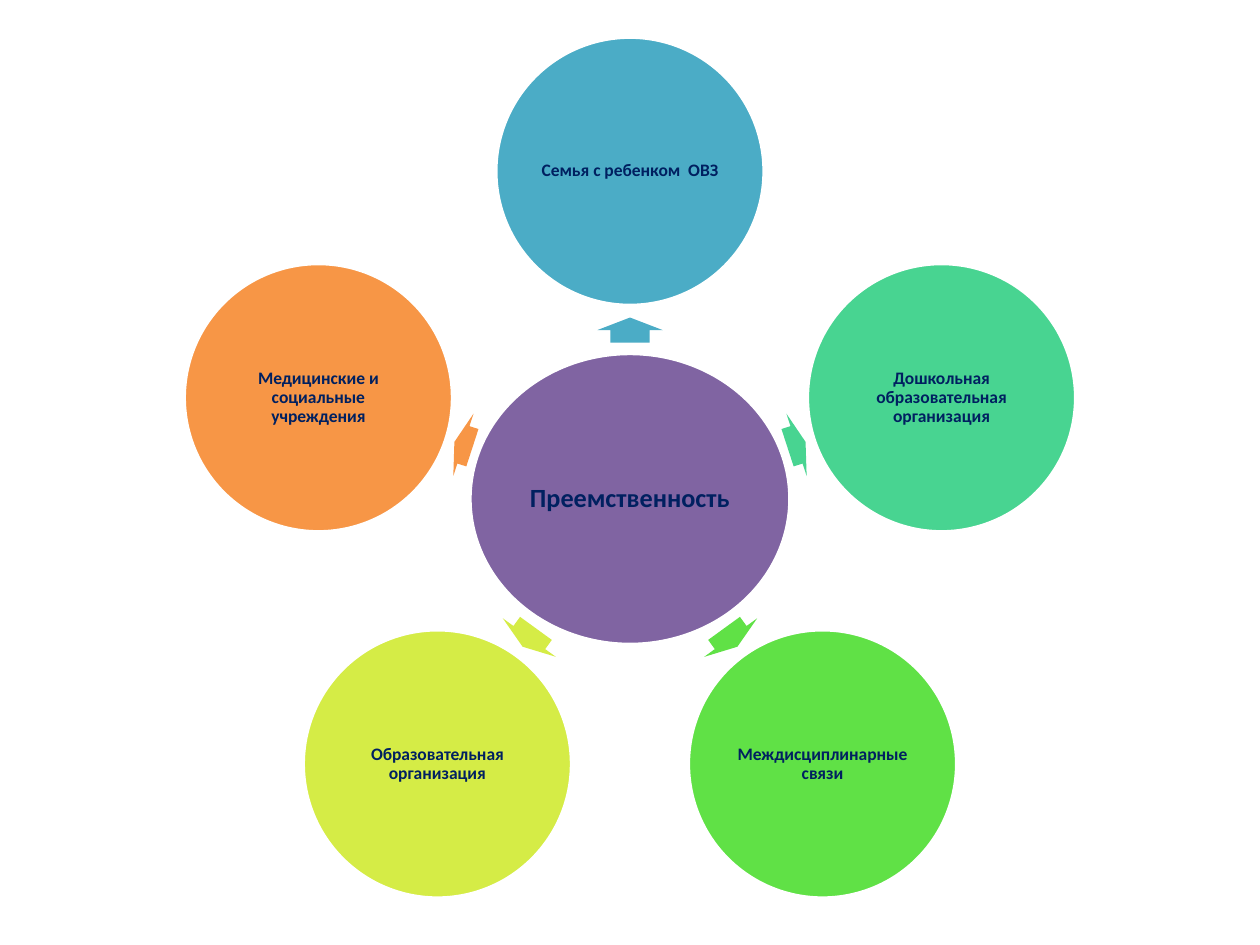
import math

import pptx
import pptx.dml.color
import pptx.enum.shapes
import pptx.enum.text
import pptx.util

SLIDE_WIDTH, SLIDE_HEIGHT = 10, 7.5
CENTRE_X, CENTRE_Y = SLIDE_WIDTH * 0.5, 3.96
RING_RADIUS = 2.6
PARTNER_SIZE = 2.13
HUB_WIDTH, HUB_HEIGHT = 2.54, 2.31
ARROW_WIDTH = 0.52
PARTNERS = [
    ("Семья с ребенком  ОВЗ", "4BACC6", 1.34, 0.2),
    ("Дошкольная образовательная организация", "48D491", 1.39, 0.15),
    ("Междисциплинарные связи", "60E146", 1.36, 0.18),
    ("Образовательная организация", "D5EC46", 1.36, 0.18),
    ("Медицинские и социальные учреждения", "F79646", 1.39, 0.15),
]


def color(value):
    return pptx.dml.color.RGBColor.from_string(value)


def ring_point(angle, radius):
    turn = math.radians(angle)
    return CENTRE_X + radius * math.cos(turn), CENTRE_Y + radius * math.sin(turn)


def add_centred(group, kind, point, width, height, fill):
    x, y = point
    shape = group.shapes.add_shape(
        kind,
        pptx.util.Inches(x - width / 2),
        pptx.util.Inches(y - height / 2),
        pptx.util.Inches(width),
        pptx.util.Inches(height),
    )
    shape.shadow.inherit = False
    shape.fill.solid()
    shape.fill.fore_color.rgb = color(fill)
    shape.line.fill.background()
    return shape


def add_circle(group, point, width, height, fill, text, size, inset):
    circle = add_centred(
        group, pptx.enum.shapes.MSO_SHAPE.OVAL, point, width, height, fill
    )
    circle.line.color.rgb = color("FFFFFF")
    circle.line.width = pptx.util.Pt(2)
    frame = circle.text_frame
    frame.word_wrap = True
    frame.vertical_anchor = pptx.enum.text.MSO_ANCHOR.MIDDLE
    frame.margin_left = frame.margin_right = pptx.util.Inches(inset)
    frame.margin_top = frame.margin_bottom = pptx.util.Inches(inset)
    para = frame.paragraphs[0]
    para.text = text
    para.alignment = pptx.enum.text.PP_ALIGN.CENTER
    para.line_spacing = 0.9
    para.font.name = "Calibri"
    para.font.size = pptx.util.Pt(size)
    para.font.bold = True
    para.font.color.rgb = color("002060")


def add_arrow(group, angle, radius, length, fill):
    arrow = add_centred(
        group,
        pptx.enum.shapes.MSO_SHAPE.RIGHT_ARROW,
        ring_point(angle, radius),
        length,
        ARROW_WIDTH,
        fill,
    )
    arrow.adjustments[0] = 0.6
    arrow.adjustments[1] = 0.5
    arrow.rotation = angle % 360


def main():
    deck = pptx.Presentation()
    deck.slide_width = pptx.util.Inches(SLIDE_WIDTH)
    deck.slide_height = pptx.util.Inches(SLIDE_HEIGHT)
    page = deck.slides.add_slide(deck.slide_layouts[6])
    diagram = page.shapes.add_group_shape()
    add_circle(
        diagram, (CENTRE_X, CENTRE_Y), HUB_WIDTH, HUB_HEIGHT,
        "8064A2", "Преемственность", 15, 0.02,
    )
    for index, (text, fill, arrow_radius, arrow_length) in enumerate(PARTNERS):
        angle = -90 + index * 360 / len(PARTNERS)
        add_arrow(diagram, angle, arrow_radius, arrow_length, fill)
        add_circle(
            diagram, ring_point(angle, RING_RADIUS), PARTNER_SIZE, PARTNER_SIZE,
            fill, text, 10, 0.01,
        )
    deck.save("out.pptx")


if __name__ == "__main__":
    main()
